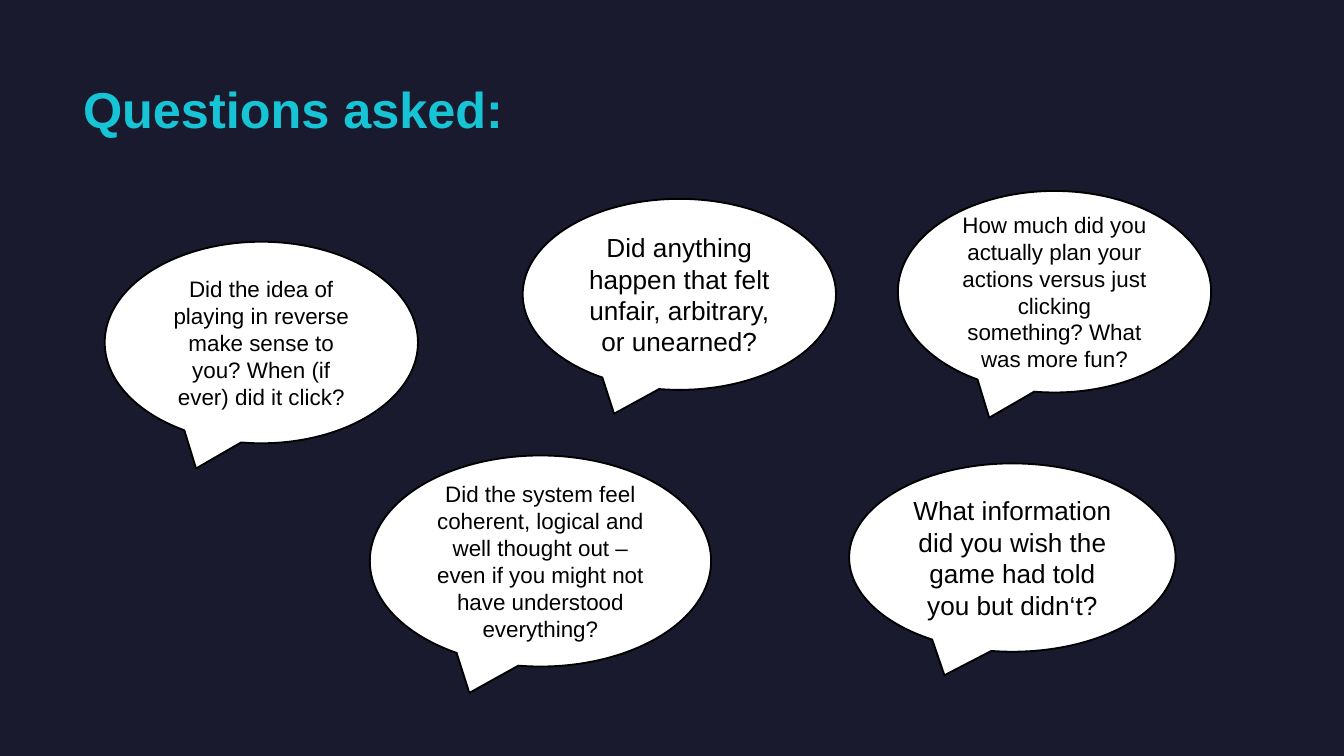
from pptx import Presentation
from pptx.dml.color import RGBColor
from pptx.enum.shapes import MSO_SHAPE
from pptx.enum.text import MSO_ANCHOR, PP_ALIGN
from pptx.util import Cm, Pt

BUBBLE = MSO_SHAPE.OVAL_CALLOUT
MIDDLE = MSO_ANCHOR.MIDDLE
CENTER = PP_ALIGN.CENTER

NAVY = RGBColor(0x1A, 0x1A, 0x2E)
CYAN = RGBColor(0x16, 0xC4, 0xD6)
WHITE = RGBColor(0xFF, 0xFF, 0xFF)
BLACK = RGBColor(0x00, 0x00, 0x00)

QUESTIONS = [
    ("Did anything happen that felt unfair, arbitrary, or unearned?",
     14, (9.88, 3.76, 5.92, 3.61)),
    ("How much did you actually plan your actions versus just clicking something? What was more fun?",
     12, (16.97, 3.61, 5.92, 3.81)),
    ("Did the system feel coherent, logical and well thought out – even if you might not have understood everything?",
     12, (6.99, 8.61, 6.45, 3.99)),
    ("What information did you wish the game had told you but didn‘t?",
     14, (16.05, 8.76, 6.17, 3.56)),
    ("Did the idea of playing in reverse make sense to you? When (if ever) did it click?",
     12, (1.98, 4.57, 5.92, 3.81)),
]


def style(target, values):
    for name, value in values.items():
        setattr(target, name, value)


class QuestionSlide:
    font_name = "Arial"
    title_frame = {"word_wrap": True, "margin_left": 0, "margin_top": 0,
                   "margin_right": 0, "margin_bottom": 0}
    bubble_frame = {"word_wrap": True, "vertical_anchor": MIDDLE}

    def __init__(self, deck):
        self.slide = deck.slides.add_slide(deck.slide_layouts[6])
        background = self.slide.background.fill
        background.solid()
        background.fore_color.rgb = NAVY

    def add_span(self, para, text, size, color, bold=False):
        span = para.add_run()
        span.text = text
        style(span.font, {"name": self.font_name, "size": Pt(size), "bold": bold})
        span.font.color.rgb = color

    def title(self, text, place):
        box = self.slide.shapes.add_textbox(*map(Cm, place))
        style(box.text_frame, self.title_frame)
        para = box.text_frame.paragraphs[0]
        para.line_spacing = Pt(30)
        self.add_span(para, text, 27, CYAN, bold=True)

    def bubble(self, text, size, place):
        shape = self.slide.shapes.add_shape(BUBBLE, *map(Cm, place))
        shape.shadow.inherit = False
        shape.fill.solid()
        shape.fill.fore_color.rgb = WHITE
        shape.line.color.rgb = BLACK
        shape.line.width = Pt(1)
        style(shape.text_frame, self.bubble_frame)
        para = shape.text_frame.paragraphs[0]
        para.alignment = CENTER
        self.add_span(para, text, size, BLACK)


def main():
    deck = Presentation()
    style(deck, {"slide_width": Cm(25.4), "slide_height": Cm(14.29)})
    page = QuestionSlide(deck)
    page.title("Questions asked:", (1.57, 1.57, 11.35, 1.07))
    for text, size, place in QUESTIONS:
        page.bubble(text, size, place)
    deck.save("out.pptx")


if __name__ == "__main__":
    main()
